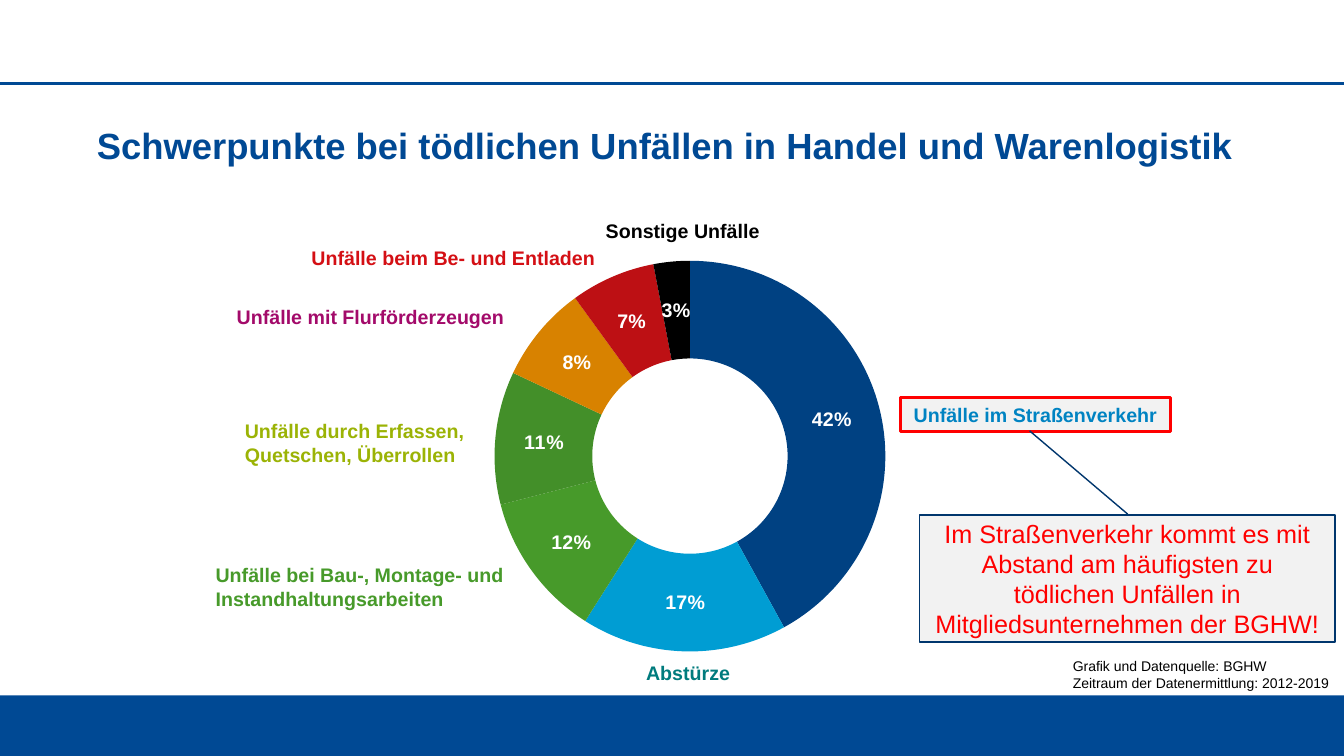
from dataclasses import dataclass

from lxml import etree
from pptx import Presentation
from pptx.chart.data import CategoryChartData
from pptx.dml.color import RGBColor
from pptx.enum.chart import XL_CHART_TYPE as CHART
from pptx.enum.shapes import MSO_CONNECTOR, MSO_SHAPE as SHAPE
from pptx.enum.text import MSO_ANCHOR, PP_ALIGN as ALIGN
from pptx.oxml import parse_xml
from pptx.oxml.ns import nsdecls, qn
from pptx.util import Inches, Pt


@dataclass(frozen=True)
class Theme:
    font: str = "Arial"
    blue: str = "004994"
    navy: str = "00366D"
    traffic: str = "0083C2"
    red: str = "FF0000"
    panel: str = "F2F2F2"
    black: str = "000000"
    white: str = "FFFFFF"
    slices: tuple = ("004182", "009DD3", "479A2A", "438F29", "D88200", "BD1014", "000000")
    title: int = 26
    callout: int = 18
    label: int = 14
    source: int = 10


theme = Theme()


def rgb(value):
    return RGBColor.from_string(value)


def write(sp, text, size, color, bold=False, align=ALIGN.LEFT):
    tf = sp.text_frame
    tf.word_wrap = True
    tf.text = text
    for p in tf.paragraphs:
        p.alignment = align
        for r in p.runs:
            r.font.name = theme.font
            r.font.size = Pt(size)
            r.font.bold = bold
            r.font.color.rgb = rgb(color)
    return tf


prs = Presentation()
prs.slide_width, prs.slide_height = Inches(13.33), Inches(7.5)
s = prs.slides.add_slide(prs.slide_layouts[6])

# Footer band and header rule
band = s.shapes.add_shape(SHAPE.RECTANGLE, 0, Inches(6.9), prs.slide_width, Inches(0.6))
band.shadow.inherit = False
band.fill.solid()
band.fill.fore_color.rgb = rgb(theme.blue)
band.line.fill.background()

rule = s.shapes.add_connector(MSO_CONNECTOR.STRAIGHT, 0, Inches(0.83), prs.slide_width, Inches(0.83))
rule.line.color.rgb = rgb(theme.blue)
rule.line.width = Pt(2)
etree.SubElement(rule._element.spPr, qn("a:effectLst"))

# Title
title = s.shapes.add_textbox(Inches(0.96), Inches(1.27), Inches(11.42), Inches(0.57))
tf = write(title, "Schwerpunkte bei tödlichen Unfällen in Handel und Warenlogistik",
           theme.title, theme.blue, bold=True)
tf.margin_left = tf.margin_top = 0
tf.paragraphs[0].line_spacing = 0.9

# Doughnut chart
data = CategoryChartData()
data.categories = ["1", "2", "3", "4", "5", "6", "7"]
data.add_series("Series 1", (42, 17, 12, 11, 8, 7, 3))
chart = s.shapes.add_chart(CHART.DOUGHNUT, Inches(3.91), Inches(2.49),
                           Inches(5.82), Inches(3.98), data).chart
chart.has_legend = False
chart.has_title = False
chart.font.name = theme.font
chart.font.size = Pt(theme.callout)
chart.font.color.rgb = rgb(theme.black)

plot = chart.plots[0]
plot.vary_by_categories = True
for i, color in enumerate(theme.slices):
    point = plot.series[0].points[i]
    point.format.fill.solid()
    point.format.fill.fore_color.rgb = rgb(color)
    point.format.line.fill.background()

plot.has_data_labels = True
labels = plot.data_labels
labels.show_percentage = True
labels.show_value = False
labels.number_format = "0%"
labels.number_format_is_linked = False
labels.font.name = theme.font
labels.font.size = Pt(theme.label)
labels.font.bold = True
labels.font.color.rgb = rgb(theme.white)

# Fixed inner plot area
area = chart._chartSpace.chart.plotArea
for old in area.findall(qn("c:layout")):
    area.remove(old)
area.insert(0, parse_xml(
    f'<c:layout {nsdecls("c")}><c:manualLayout><c:layoutTarget val="inner"/>'
    '<c:xMode val="edge"/><c:yMode val="edge"/><c:x val="0.171"/><c:y val="0.023"/>'
    '<c:w val="0.666"/><c:h val="0.977"/></c:manualLayout></c:layout>'))

# Highlighted label and callout
panels = [
    (SHAPE.RECTANGLE, 8.93, 3.94, 2.68, 0.34, theme.red, 2.25,
     "Unfälle im Straßenverkehr", theme.label, theme.traffic, True, ()),
    (SHAPE.LINE_CALLOUT_1, 9.12, 5.11, 4.12, 1.26, theme.navy, 1,
     "Im Straßenverkehr kommt es mit Abstand am häufigsten zu tödlichen Unfällen in "
     "Mitgliedsunternehmen der BGHW!", theme.callout, theme.red, False,
     (-0.008, 0.501, -0.663, 0.265)),
]
for kind, x, y, w, h, edge, width, text, size, color, bold, adjustments in panels:
    sp = s.shapes.add_shape(kind, Inches(x), Inches(y), Inches(w), Inches(h))
    sp.shadow.inherit = False
    sp.fill.solid()
    sp.fill.fore_color.rgb = rgb(theme.panel)
    sp.line.color.rgb = rgb(edge)
    sp.line.width = Pt(width)
    for i, value in enumerate(adjustments):
        sp.adjustments[i] = value
    tf = write(sp, text, size, color, bold, ALIGN.CENTER)
    tf.vertical_anchor = MSO_ANCHOR.MIDDLE

# Category labels around the ring
categories = [
    (6.21, 6.51, 1.23, 0.34, "Abstürze", "007B7D", ALIGN.CENTER),
    (2.04, 5.54, 3.34, 0.57, "Unfälle bei Bau-, Montage- und Instandhaltungsarbeiten",
     "479A2A", ALIGN.LEFT),
    (2.33, 4.11, 2.52, 0.57, "Unfälle durch Erfassen, Quetschen, Überrollen",
     "9BB305", ALIGN.LEFT),
    (2.25, 2.98, 2.93, 0.34, "Unfälle mit Flurförderzeugen", "A30A6A", ALIGN.LEFT),
    (2.99, 2.39, 3.05, 0.34, "Unfälle beim Be- und Entladen", "D40F14", ALIGN.LEFT),
    (5.91, 2.12, 1.83, 0.34, "Sonstige Unfälle", theme.black, ALIGN.LEFT),
]
for x, y, w, h, text, color, align in categories:
    box = s.shapes.add_textbox(Inches(x), Inches(y), Inches(w), Inches(h))
    write(box, text, theme.label, color, True, align)

# Data source
source = s.shapes.add_textbox(Inches(10.6), Inches(6.48), Inches(2.73), Inches(0.42))
tf = write(source, "Grafik und Datenquelle: BGHW\nZeitraum der Datenermittlung: 2012-2019",
           theme.source, theme.black)
tf.margin_left = tf.margin_right = tf.margin_top = tf.margin_bottom = Inches(0.04)

prs.save("out.pptx")
